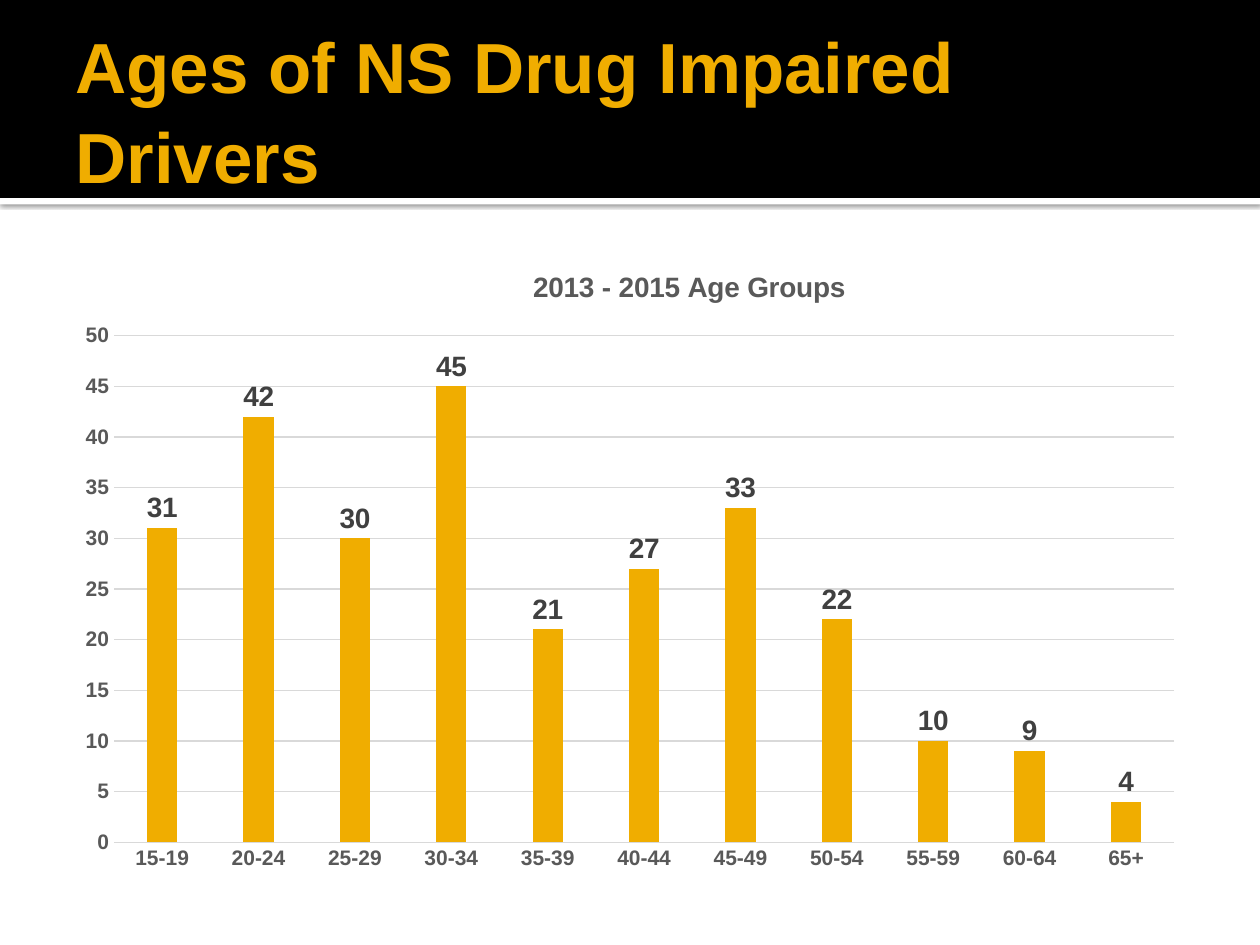
from dataclasses import dataclass

from lxml import etree
from pptx import Presentation
from pptx import util as u
from pptx.chart.data import CategoryChartData
from pptx.dml.color import RGBColor
from pptx.enum import chart as charts, shapes, text
from pptx.oxml import parse_xml
from pptx.oxml.ns import nsdecls


@dataclass(frozen=True)
class Theme:
    font: str = "Arial"
    gold: str = "F0AD00"
    black: str = "000000"
    white: str = "FFFFFF"
    axis_text: str = "595959"
    label_text: str = "404040"
    grid: str = "D9D9D9"
    title_size: float = 40.5
    chart_size: float = 16
    axis_size: float = 12
    rule_width: float = 0.75


theme = Theme()


def write(target, words=None, *, size, color):
    """Put words, if any, into a paragraph and format its bold font."""
    if words is not None:
        target.text = words
    font = target.font
    font.name, font.size, font.bold = theme.font, u.Pt(size), True
    font.color.rgb = RGBColor.from_string(color)


def set_layout(parent, before, **fractions):
    """Give a chart part a fixed place, as fractions of the chart."""
    for old in parent.findall("{*}layout"):
        parent.remove(old)
    inner = '<c:layoutTarget val="inner"/>' if "w" in fractions else ""
    modes = "".join(f'<c:{axis}Mode val="edge"/>' for axis in "xy")
    places = "".join(f'<c:{key} val="{value}"/>' for key, value in fractions.items())
    layout = parse_xml(f'<c:layout {nsdecls("c")}><c:manualLayout>{inner}{modes}{places}'
                       '</c:manualLayout></c:layout>')
    parent.insert(before, layout)


deck = Presentation()
deck.slide_width, deck.slide_height = u.Cm(25.4), u.Cm(19.05)
slide = deck.slides.add_slide(deck.slide_layouts[5])

# Header band with a white, shadowed edge under it
for top, height, color in ((3.99, 0.13, theme.white), (0, 3.99, theme.black)):
    band = slide.shapes.add_shape(shapes.MSO_SHAPE.RECTANGLE, 0, u.Cm(top),
                                  deck.slide_width, u.Cm(height))
    band.shadow.inherit = False
    band.fill.solid()
    band.fill.fore_color.rgb = RGBColor.from_string(color)
    band.line.fill.background()
    if color == theme.white:
        effects = band.element.spPr.find("{*}effectLst")
        effects.append(parse_xml(
            f'<a:outerShdw {nsdecls("a")} blurRad="{u.Pt(2.5)}" dist="{u.Pt(0.8)}" '
            f'dir="5400000" algn="tl" rotWithShape="0"><a:srgbClr val="{theme.black}">'
            '<a:alpha val="60000"/></a:srgbClr></a:outerShdw>'))

# Title, brought in front of the band
title = slide.shapes.title
title.element.getparent().append(title.element)
title.left, title.top, title.width, title.height = map(u.Cm, (1.27, 0.43, 22.86, 3.48))
frame = title.text_frame
frame.auto_size, frame.word_wrap = text.MSO_AUTO_SIZE.NONE, True
frame.vertical_anchor = text.MSO_ANCHOR.MIDDLE
frame.margin_left = u.Cm(0.25)
frame.margin_right = frame.margin_top = frame.margin_bottom = u.Cm(0.13)
heading = frame.paragraphs[0]
heading.alignment = text.PP_ALIGN.LEFT
heading.line_spacing = 1.06
write(heading, "Ages of NS Drug Impaired Drivers", size=theme.title_size, color=theme.gold)

# Age chart
drivers_by_age = {
    "15-19": 31, "20-24": 42, "25-29": 30, "30-34": 45, "35-39": 21, "40-44": 27,
    "45-49": 33, "50-54": 22, "55-59": 10, "60-64": 9, "65+": 4,
}
ages = CategoryChartData()
ages.categories = list(drivers_by_age)
ages.add_series("Series 1", list(drivers_by_age.values()))
chart = slide.shapes.add_chart(charts.XL_CHART_TYPE.COLUMN_CLUSTERED, u.Cm(1.27), u.Cm(4.93),
                               u.Cm(22.86), u.Cm(12.85), ages).chart
chart.has_legend = False
write(chart.chart_title.text_frame.paragraphs[0], "2013 - 2015 Age Groups",
      size=theme.chart_size, color=theme.axis_text)
chart.chart_title.include_in_layout = False
set_layout(chart.element.find(".//{*}chart/{*}title"), 1, x=0.41, y=0.03)
set_layout(chart.element.find(".//{*}plotArea"), 0, x=0.045, y=0.143, w=0.935, h=0.795)

age_axis, driver_axis = chart.category_axis, chart.value_axis
driver_axis.minimum_scale, driver_axis.maximum_scale, driver_axis.major_unit = 0, 50, 5
driver_axis.has_major_gridlines = True
driver_axis.format.line.fill.background()
for axis in (age_axis, driver_axis):
    axis.major_tick_mark = axis.minor_tick_mark = charts.XL_TICK_MARK.NONE
    write(axis.tick_labels, size=theme.axis_size, color=theme.axis_text)
for rule in (age_axis.format.line, driver_axis.major_gridlines.format.line):
    rule.color.rgb = RGBColor.from_string(theme.grid)
    rule.width = u.Pt(theme.rule_width)

plot = chart.plots[0]
plot.gap_width, plot.overlap, plot.vary_by_categories = 219, -27, False
drivers = plot.series[0]
drivers.format.fill.solid()
drivers.format.fill.fore_color.rgb = RGBColor.from_string(theme.gold)
counts = drivers.data_labels
counts.show_value = True
counts.position = charts.XL_LABEL_POSITION.OUTSIDE_END
write(counts, size=theme.chart_size, color=theme.label_text)

deck.save("out.pptx")
